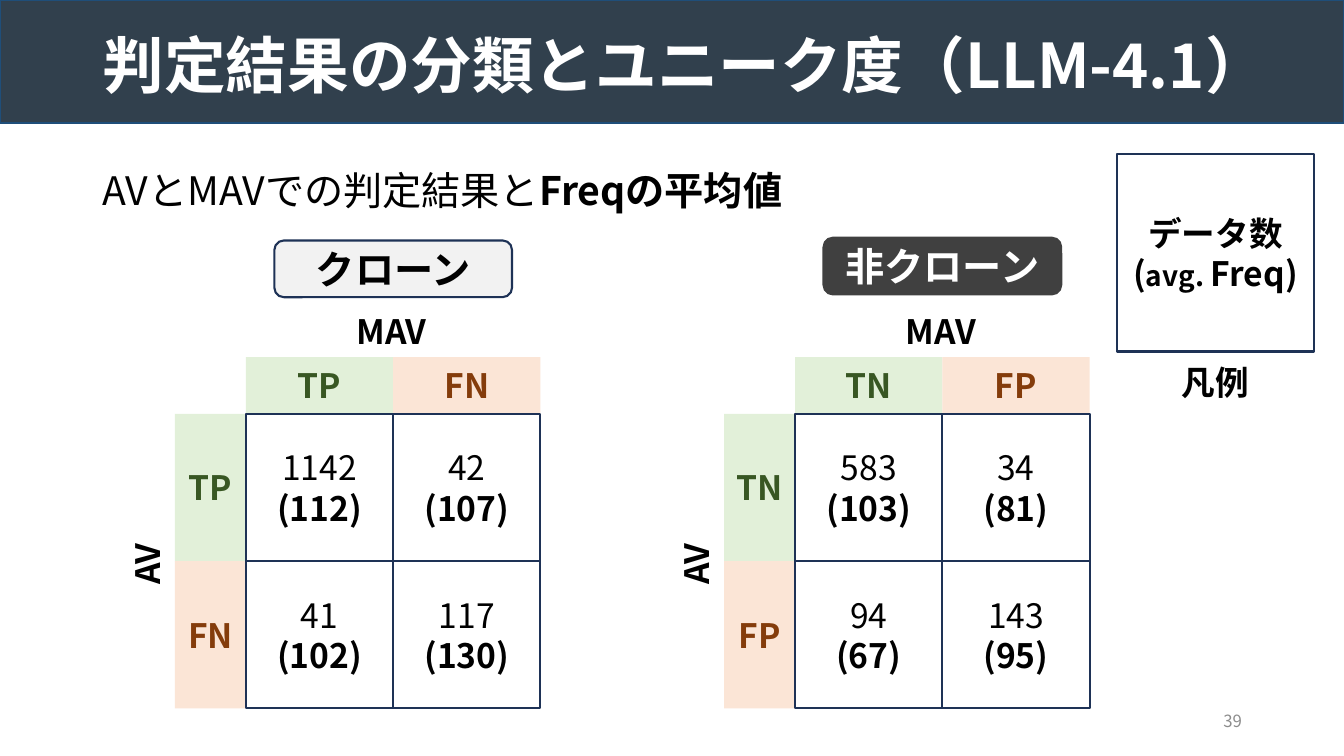
import pptx
import pptx.dml.color
import pptx.enum.shapes
import pptx.enum.text
import pptx.oxml
import pptx.oxml.ns
import pptx.util

Cm = pptx.util.Cm
Pt = pptx.util.Pt
RGBColor = pptx.dml.color.RGBColor
SHAPE = pptx.enum.shapes.MSO_SHAPE
ALIGN = pptx.enum.text.PP_ALIGN
ANCHOR = pptx.enum.text.MSO_ANCHOR

FONT = "Noto Sans CJK JP"
WHITE = RGBColor(0xFF, 0xFF, 0xFF)
BLACK = RGBColor(0x00, 0x00, 0x00)
GRAY = RGBColor(0x8C, 0x8C, 0x8C)
SLATE = RGBColor(0x31, 0x40, 0x4D)
BLUE = RGBColor(0x1F, 0x4E, 0x79)
NAVY = RGBColor(0x1E, 0x32, 0x56)
PALE = RGBColor(0xF2, 0xF2, 0xF2)
CHARCOAL = RGBColor(0x40, 0x40, 0x40)
GREEN_FILL = RGBColor(0xE2, 0xF0, 0xD9)
GREEN_TEXT = RGBColor(0x38, 0x57, 0x23)
ORANGE_FILL = RGBColor(0xFB, 0xE5, 0xD6)
ORANGE_TEXT = RGBColor(0x84, 0x3C, 0x0B)

# Matrix measures in centimetres
CELL = 3.71
GRID_TOP = 10.43
HEAD_HEIGHT = 1.43
SIDE_WIDTH = 1.79
PILL_WIDTH = 5.99
LABEL_HEIGHT = 1.27


def apply_format(target, values):
    for name, value in values.items():
        setattr(target, name, value)


def write_text(shape, paragraphs, frame_format, para_format):
    """Each paragraph is a list of (text, size, bold, colour) spans."""
    frame = shape.text_frame
    apply_format(frame, frame_format)
    for index, spans in enumerate(paragraphs):
        para = frame.add_paragraph() if index else frame.paragraphs[0]
        apply_format(para, para_format)
        for text, size, bold, colour in spans:
            span = para.add_run()
            span.text = text
            apply_format(span.font, {"name": FONT, "size": Pt(size), "bold": bold})
            span.font.color.rgb = colour
            # East Asian typeface
            east_asian = pptx.oxml.parse_xml(
                f'<a:ea {pptx.oxml.ns.nsdecls("a")} typeface="{FONT}"/>')
            span.font._element.append(east_asian)


def add_box(page, place, fill, paragraphs=(), line=None, width=1.5, kind=SHAPE.RECTANGLE):
    box = page.shapes.add_shape(kind, *map(Cm, place))
    box.shadow.inherit = False
    box.fill.solid()
    box.fill.fore_color.rgb = fill
    if line is None:
        box.line.fill.background()
    else:
        box.line.color.rgb = line
        box.line.width = Pt(width)
    write_text(box, paragraphs,
               {"word_wrap": True, "vertical_anchor": ANCHOR.MIDDLE},
               {"alignment": ALIGN.CENTER})


def add_text(page, place, spans, frame_format, para_format):
    box = page.shapes.add_textbox(*map(Cm, place))
    write_text(box, [spans], frame_format, para_format)
    return box


def add_label(page, place, text):
    return add_text(page, place, [(text, 24, True, BLACK)],
                    {"word_wrap": False}, {"alignment": ALIGN.CENTER})


def add_matrix(page, left, classes, counts):
    # Class headers along the top and the side
    styles = ((GREEN_FILL, GREEN_TEXT), (ORANGE_FILL, ORANGE_TEXT))
    for index, (name, (fill, colour)) in enumerate(zip(classes, styles)):
        heading = [[(name, 24, True, colour)]]
        add_box(page, (left + index * CELL, GRID_TOP - HEAD_HEIGHT, CELL, HEAD_HEIGHT),
                fill, heading)
        add_box(page, (left - SIDE_WIDTH, GRID_TOP + index * CELL, SIDE_WIDTH, CELL),
                fill, heading)

    # Counts with average frequency
    for row, pairs in enumerate(counts):
        for column, (count, average) in enumerate(pairs):
            add_box(page, (left + column * CELL, GRID_TOP + row * CELL, CELL, CELL), WHITE,
                    [[(str(count), 24, False, BLACK)],
                     [(f"({average})", 24, True, BLACK)]], NAVY)

    # Axis names
    add_label(page, (left + CELL - 1.3, 7.72, 2.52, LABEL_HEIGHT), "MAV")
    side_label = add_label(page, (left - 3.34, 13.58, 1.68, LABEL_HEIGHT), "AV")
    side_label.rotation = 270


def add_pill(page, left, top, text, fill, line, colour):
    add_box(page, (left + CELL - PILL_WIDTH / 2, top, PILL_WIDTH, HEAD_HEIGHT), fill,
            [[(text, 28, True, colour)]], line, kind=SHAPE.ROUNDED_RECTANGLE)


def main():
    deck = pptx.Presentation()
    apply_format(deck, {"slide_width": Cm(33.87), "slide_height": Cm(19.05)})
    page = deck.slides.add_slide(deck.slide_layouts[6])

    # Title band
    add_box(page, (0, 0, 33.87, 3.1), SLATE, line=BLUE, width=1)
    add_text(page, (2.34, 0.46, 31.5, 2.24),
             [("判定結果の分類とユニーク度（LLM-4.1）", 44, True, WHITE)],
             {"word_wrap": True, "vertical_anchor": ANCHOR.BOTTOM},
             {"line_spacing": 0.9})

    # Lead sentence
    add_text(page, (2.34, 4.19, 29.21, 1.68),
             [("AVとMAVでの判定結果と", 28, False, BLACK), ("Freqの平均値", 28, True, BLACK)],
             {"word_wrap": True}, {"line_spacing": 0.9, "space_before": Pt(10)})

    # Clone and non-clone matrices
    clone_left, other_left = 6.2, 20.04
    add_matrix(page, clone_left, ("TP", "FN"),
               (((1142, 112), (42, 107)), ((41, 102), (117, 130))))
    add_matrix(page, other_left, ("TN", "FP"),
               (((583, 103), (34, 81)), ((94, 67), (143, 95))))
    add_pill(page, clone_left, 6.06, "クローン", PALE, NAVY, BLACK)
    add_pill(page, other_left, 5.99, "非クローン", CHARCOAL, CHARCOAL, WHITE)

    # Legend
    add_box(page, (28.14, 3.88, 4.98, 4.98), WHITE,
            [[("データ数", 24, True, BLACK)],
             [("(", 24, True, BLACK), ("avg. ", 20, True, BLACK), ("Freq)", 24, True, BLACK)]],
            NAVY)
    add_label(page, (29.51, 8.99, 2.24, LABEL_HEIGHT), "凡例")

    # Page number
    add_text(page, (23.93, 17.65, 7.62, 1.02), [("39", 12, False, GRAY)],
             {"word_wrap": True, "vertical_anchor": ANCHOR.MIDDLE},
             {"alignment": ALIGN.RIGHT})

    deck.save("out.pptx")


if __name__ == "__main__":
    main()
